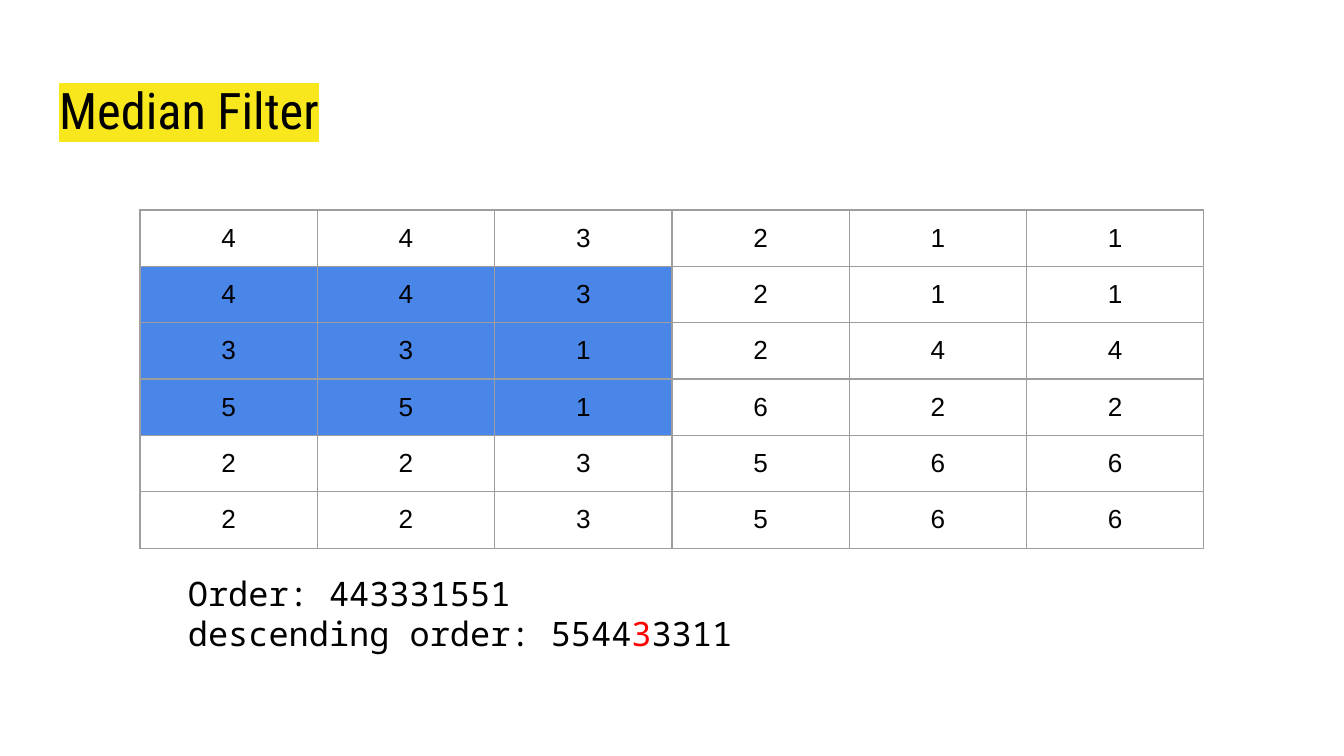
"""Build a slide that shows a median filter window on a grid of numbers."""
import pptx
import pptx.util
import pptx.dml.color
import pptx.enum.text
import pptx.oxml
import pptx.oxml.ns

Pt = pptx.util.Pt
RGB = pptx.dml.color.RGBColor.from_string
align = pptx.enum.text.PP_ALIGN
anchor = pptx.enum.text.MSO_ANCHOR
hues = {"ink": "000000", "mark": "F8E71C", "window": "4A86E8",
        "median": "FF0000", "grid": "9E9E9E", "paper": "FFFFFF"}
space = pptx.oxml.ns.nsdecls("a")


def write(para, text, size, font, hue="ink"):
    run = para.add_run()
    run.text = text
    run.font.size = Pt(size)
    run.font.name = font
    run.font.color.rgb = RGB(hues[hue])
    return run


def inset(item):
    item.margin_left = item.margin_right = Pt(7.2)
    item.margin_top = item.margin_bottom = Pt(7.2)


deck = pptx.Presentation()
deck.slide_width, deck.slide_height = Pt(720), Pt(405)
slide = deck.slides.add_slide(deck.slide_layouts[5])
slide.background.fill.solid()
slide.background.fill.fore_color.rgb = RGB(hues["paper"])

title = slide.shapes.title
title.left, title.top, title.width, title.height = Pt(24.5), Pt(35.3), Pt(671), Pt(45.4)
frame = title.text_frame
inset(frame)
frame.word_wrap = True
frame.auto_size = pptx.enum.text.MSO_AUTO_SIZE.NONE
frame.vertical_anchor = anchor.TOP
para = frame.paragraphs[0]
para.alignment = align.LEFT
run = write(para, "Median Filter", 27, "Roboto Condensed")
mark = pptx.oxml.parse_xml(
    f'<a:highlight {space}><a:srgbClr val="{hues["mark"]}"/></a:highlight>')
run.font._element.find(pptx.oxml.ns.qn("a:latin")).addprevious(mark)

rows = ["443211", "443211", "331244", "551622", "223566", "223566"]
count = len(rows)
table = slide.shapes.add_table(
    count, count, Pt(75), Pt(112.5), Pt(570), Pt(181.2)).table
table.first_row = table.horz_banding = False
for col in table.columns:
    col.width = Pt(95)
for r, row in enumerate(rows):
    table.rows[r].height = Pt(30.2)
    for c, digit in enumerate(row):
        cell = table.cell(r, c)
        inset(cell)
        para = cell.text_frame.paragraphs[0]
        para.alignment = align.CENTER
        write(para, digit, 14, "Arial")
        props = cell._tc.get_or_add_tcPr()
        for side in ("lnL", "lnR", "lnT", "lnB"):
            props.append(pptx.oxml.parse_xml(
                f'<a:{side} {space} w="{Pt(0.75)}"><a:solidFill>'
                f'<a:srgbClr val="{hues["grid"]}"/></a:solidFill></a:{side}>'))
        cell.fill.solid()
        inside = 1 <= r <= 3 and c < 3
        cell.fill.fore_color.rgb = RGB(hues["window" if inside else "paper"])

box = slide.shapes.add_textbox(Pt(93.6), Pt(299.5), Pt(532.8), Pt(58.3))
frame = box.text_frame
inset(frame)
frame.word_wrap = True
frame.auto_size = pptx.enum.text.MSO_AUTO_SIZE.SHAPE_TO_FIT_TEXT
lines = [[("Order: 443331551", "ink")],
         [("descending order: 5544", "ink"), ("3", "median"), ("3311", "ink")]]
for i, line in enumerate(lines):
    para = frame.add_paragraph() if i else frame.paragraphs[0]
    for text, hue in line:
        write(para, text, 18, "Noto Sans Mono", hue)

deck.save("out.pptx")
